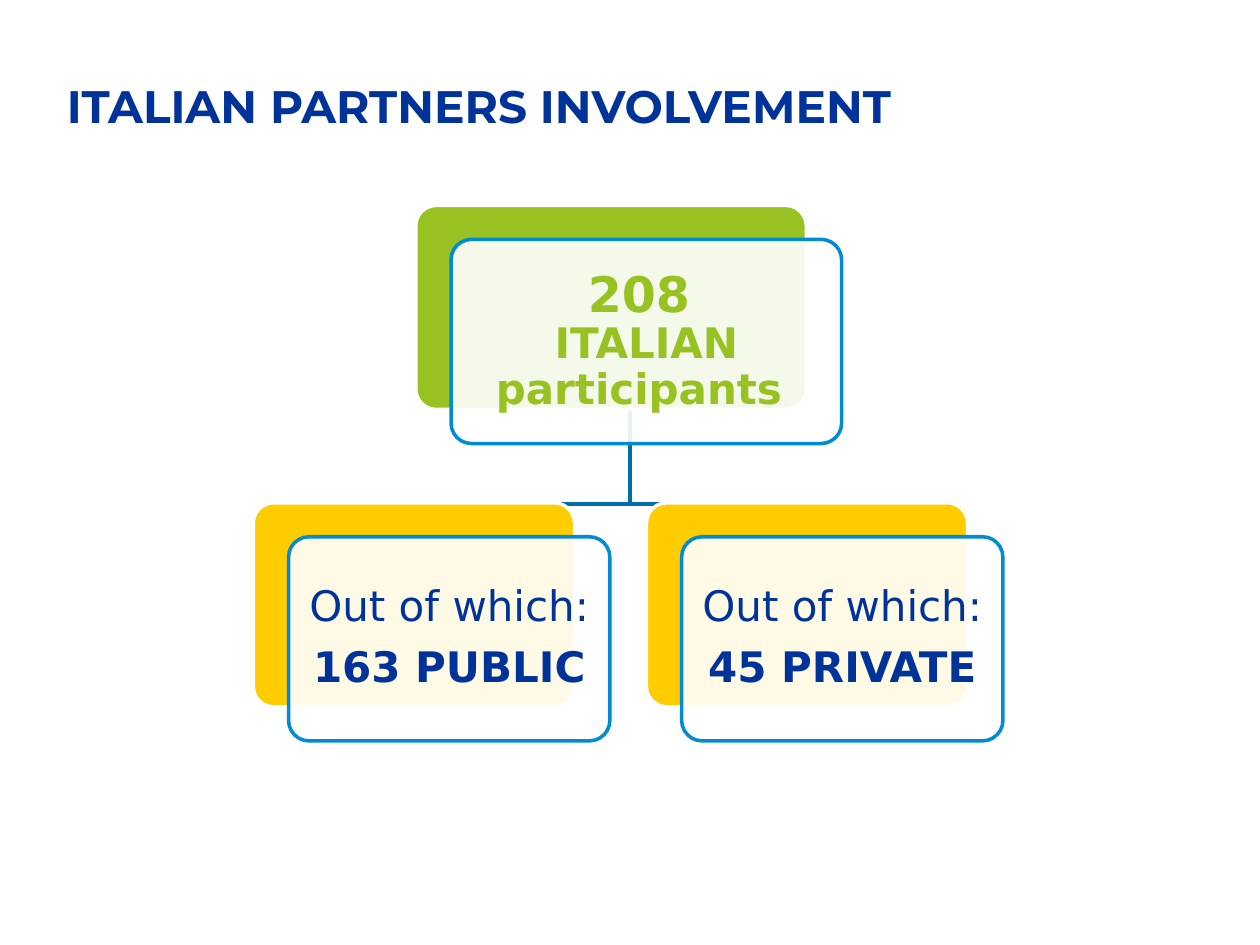
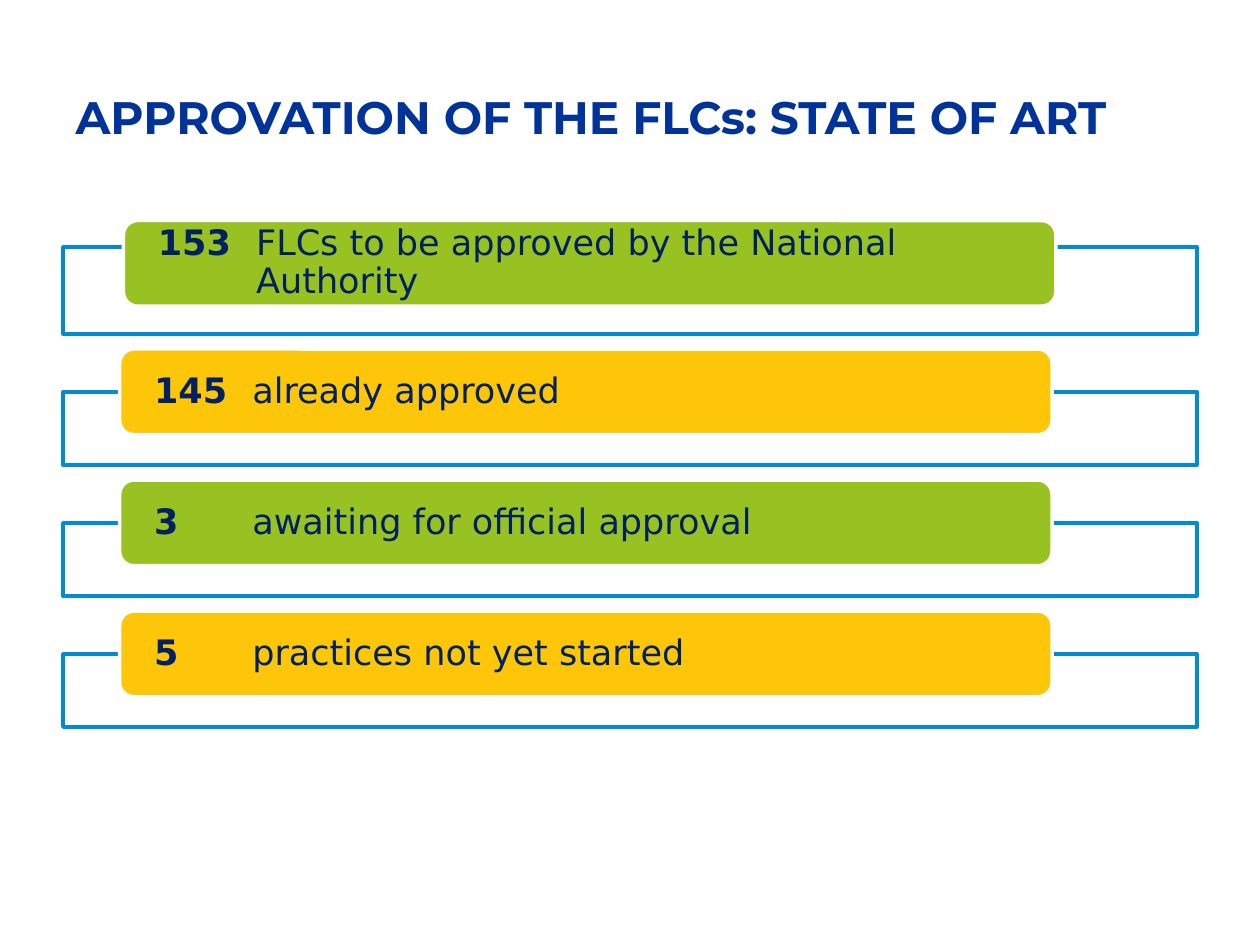
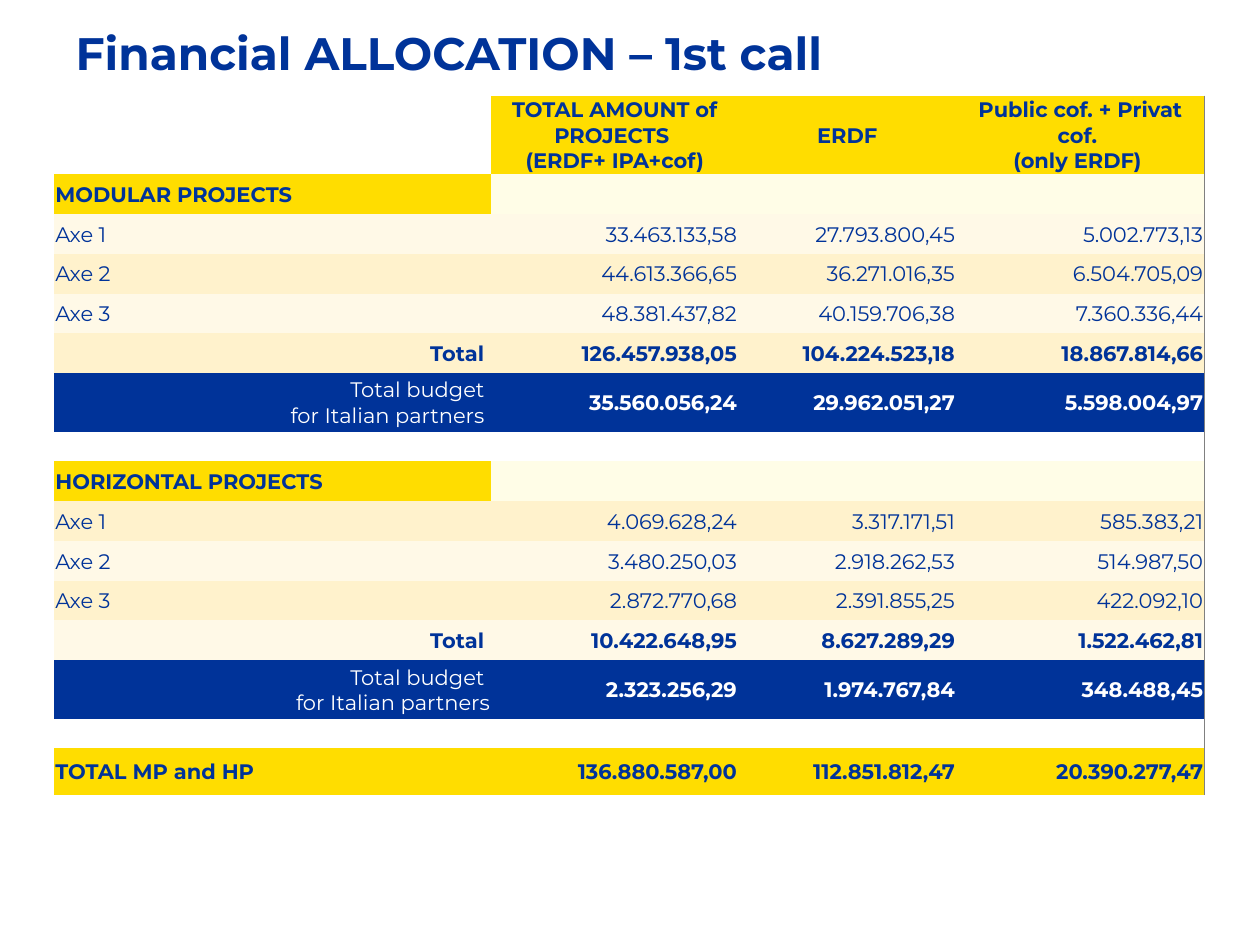
import lxml.etree
import pptx
import pptx.dml.color
import pptx.enum.shapes
import pptx.enum.text
import pptx.oxml.ns
import pptx.util

Inches = pptx.util.Inches
Pt = pptx.util.Pt
RGBColor = pptx.dml.color.RGBColor
SHAPES = pptx.enum.shapes.MSO_SHAPE
ALIGN = pptx.enum.text.PP_ALIGN
MIDDLE = pptx.enum.text.MSO_ANCHOR.MIDDLE
qn = pptx.oxml.ns.qn

NAVY = RGBColor(0x00, 0x33, 0x99)
DARK_NAVY = RGBColor(0x00, 0x20, 0x60)
BLUE = RGBColor(0x00, 0x8B, 0xD2)
LINK_BLUE = RGBColor(0x00, 0x6F, 0xA8)
GREEN = RGBColor(0x98, 0xC2, 0x22)
GOLD = RGBColor(0xFF, 0xCC, 0x00)
AMBER = RGBColor(0xFD, 0xC6, 0x08)
YELLOW = RGBColor(0xFF, 0xDD, 0x00)
IVORY = RGBColor(0xFF, 0xFD, 0xE7)
CREAM = RGBColor(0xFF, 0xF9, 0xE7)
SAND = RGBColor(0xFF, 0xF2, 0xCC)
WHITE = RGBColor(0xFF, 0xFF, 0xFF)
TITLE_FONT = "Montserrat"
DIAGRAM_FONT = "DejaVu Sans"

deck = pptx.Presentation()
deck.slide_width = Inches(10)
deck.slide_height = Inches(7.5)


def add_page(title, left, top, width, height):
    page = deck.slides.add_slide(deck.slide_layouts[5])
    box = page.shapes.title
    box.left, box.top = Inches(left), Inches(top)
    box.width, box.height = Inches(width), Inches(height)
    box.text_frame.text = title
    box.text_frame.vertical_anchor = MIDDLE
    paragraph = box.text_frame.paragraphs[0]
    paragraph.alignment = ALIGN.LEFT
    paragraph.font.name = TITLE_FONT
    paragraph.font.size = Pt(26)
    paragraph.font.bold = True
    paragraph.font.color.rgb = NAVY
    return page


def add_box(page, kind, left, top, width, height, fill, line, opacity=100):
    box = page.shapes.add_shape(
        kind, Inches(left), Inches(top), Inches(width), Inches(height))
    box.shadow.inherit = False
    box.fill.solid()
    box.fill.fore_color.rgb = fill
    box.line.color.rgb = line
    box.line.width = Pt(2)
    if opacity < 100:
        color = box.fill._xPr.find(".//" + qn("a:srgbClr"))
        lxml.etree.SubElement(color, qn("a:alpha"), val=str(opacity * 1000))
    return box


# Slide 1: partner tree
page = add_page("ITALIAN PARTNERS INVOLVEMENT", 0.43, 0.21, 9.41, 1.25)

# Branches from the total to both groups
for branch_x in (6.41, 3.29):
    builder = page.shapes.build_freeform(4.85, 3.24, scale=Inches(1))
    builder.add_line_segments(
        [(4.85, 3.75), (branch_x, 3.75), (branch_x, 3.99)], close=False)
    branch = builder.convert_to_shape()
    branch.shadow.inherit = False
    branch.fill.background()
    branch.line.color.rgb = LINK_BLUE
    branch.line.width = Pt(2)

# Cards: left, top, width, back colour, text colour, inset,
# then paragraphs as lists of (text, size, bold)
cards = [
    (3.3, 1.63, 3.1, GREEN, GREEN, 0.12,
     [[("208", 28, True), (" ", 24, True), "break",
       ("ITALIAN participants ", 24, True)]]),
    (2.01, 3.99, 2.55, GOLD, NAVY, 0.1,
     [[("Out of which: ", 24, False)], [("163 PUBLIC ", 24, True)]]),
    (5.13, 3.99, 2.55, GOLD, NAVY, 0.1,
     [[("Out of which: ", 24, False)], [("45 PRIVATE", 24, True)]]),
]
for left, top, width, back_color, text_color, inset, lines in cards:
    back = add_box(page, SHAPES.ROUNDED_RECTANGLE, left, top, width, 1.62,
                   back_color, WHITE)
    front = add_box(page, SHAPES.ROUNDED_RECTANGLE, left + 0.28, top + 0.27,
                    width, 1.62, WHITE, BLUE, opacity=90)
    back.adjustments[0] = front.adjustments[0] = 0.1
    frame = front.text_frame
    frame.word_wrap = True
    frame.vertical_anchor = MIDDLE
    frame.margin_left = frame.margin_right = Inches(inset)
    frame.margin_top = frame.margin_bottom = Inches(inset)
    for index, spans in enumerate(lines):
        paragraph = frame.add_paragraph() if index else frame.paragraphs[0]
        paragraph.alignment = ALIGN.CENTER
        paragraph.line_spacing = 0.9
        paragraph.space_after = Pt(9)
        paragraph.font.name = DIAGRAM_FONT
        for item in spans:
            if item == "break":
                paragraph.add_line_break()
                continue
            span = paragraph.add_run()
            span.text, size, span.font.bold = item
            span.font.size = Pt(size)
            span.font.color.rgb = text_color

# Slide 2: approval status
page = add_page("APPROVATION OF THE FLCs: STATE OF ART", 0.5, 0.3, 9, 1.25)

# Rows: frame top, frame height, bar left, bar top, colour, number, label
rows = [(1.96, 0.69, 0.98, 1.75, GREEN, "153",
         "FLCs to be approved by the National Authority")]
later_rows = [(AMBER, "145 ", "already approved"),
              (GREEN, "3 ", "awaiting for official approval"),
              (AMBER, "5 ", "practices not yet started")]
for index, row in enumerate(later_rows):
    offset = 1.04 * index
    rows.append((3.11 + offset, 0.58, 0.95, 2.77 + offset, *row))

for frame_top, frame_height, left, top, color, number, label in rows:
    add_box(page, SHAPES.RECTANGLE, 0.5, frame_top, 9, frame_height,
            WHITE, BLUE, opacity=90)
    bar = add_box(page, SHAPES.ROUNDED_RECTANGLE, left, top, 7.4, 0.68,
                  color, WHITE)
    frame = bar.text_frame
    frame.word_wrap = True
    frame.vertical_anchor = MIDDLE
    frame.margin_left = frame.margin_right = Inches(0.24)
    frame.margin_top = frame.margin_bottom = 0
    paragraph = frame.paragraphs[0]
    paragraph.alignment = ALIGN.LEFT
    paragraph.line_spacing = 0.9
    paragraph.space_after = Pt(7)
    properties = paragraph._p.get_or_add_pPr()
    properties.set("marL", str(Inches(0.78)))
    properties.set("indent", str(-Inches(0.78)))
    paragraph.font.name = DIAGRAM_FONT
    paragraph.font.size = Pt(20)
    for text, bold in ((number + "\t", True), (label, False)):
        span = paragraph.add_run()
        span.text = text
        span.font.bold = bold
        span.font.color.rgb = DARK_NAVY

# Slide 3: budget table
page = add_page("Financial ALLOCATION – 1st call", 0.5, -0.01, 9, 0.85)

# Rows: style, then cell texts
budget = [
    ("header", "", "TOTAL AMOUNT of PROJECTS \v(ERDF+ IPA+cof)", "ERDF",
     "Public cof. + Privat cof. \n(only ERDF) "),
    ("section", "MODULAR PROJECTS", "", "", ""),
    ("axe", "Axe 1", "33.463.133,58", "27.793.800,45", "5.002.773,13"),
    ("axe", "Axe 2", "44.613.366,65", "36.271.016,35", "6.504.705,09"),
    ("axe", "Axe 3", "48.381.437,82", "40.159.706,38", "7.360.336,44"),
    ("total", "Total ", "126.457.938,05", "104.224.523,18", "18.867.814,66"),
    ("italian", "Total budget \vfor Italian partners ", "35.560.056,24",
     "29.962.051,27", "5.598.004,97"),
    ("gap", "", "", "", ""),
    ("section", "HORIZONTAL PROJECTS", "", "", ""),
    ("axe", "Axe 1", "4.069.628,24", "3.317.171,51", "585.383,21"),
    ("axe", "Axe 2", "3.480.250,03", "2.918.262,53", "514.987,50"),
    ("axe", "Axe 3", "2.872.770,68", "2.391.855,25", "422.092,10"),
    ("total", "Total ", "10.422.648,95", "8.627.289,29", "1.522.462,81"),
    ("italian", "Total budget \vfor Italian partners", "2.323.256,29",
     "1.974.767,84", "348.488,45"),
    ("gap", "", "", "", ""),
    ("grand", "TOTAL MP and HP", "136.880.587,00", "112.851.812,47",
     "20.390.277,47"),
]
row_heights = {"header": 0.61, "section": 0.32, "axe": 0.315, "total": 0.315,
               "italian": 0.47, "gap": 0.23, "grand": 0.37}
row_fills = {"header": (None, YELLOW), "section": (YELLOW, IVORY),
             "italian": (NAVY, NAVY), "gap": (None, None),
             "grand": (YELLOW, YELLOW)}

table = page.shapes.add_table(len(budget), 4, Inches(0.43), Inches(0.76),
                              Inches(9.13), Inches(5.52)).table
table.first_row = table.horz_banding = False
# Plain style without grid
table._tbl.tblPr.find(qn("a:tableStyleId")).text = (
    "{2D5ABB26-0587-4C30-8999-92F81FD0307C}")
for column, width in zip(table.columns, (3.47, 1.96, 1.73, 1.97)):
    column.width = Inches(width)

for row_index, (style, *texts) in enumerate(budget):
    table.rows[row_index].height = Inches(row_heights[style])
    band = SAND if row_index % 2 else CREAM
    label_fill, value_fill = row_fills.get(style, (band, band))
    for column_index, text in enumerate(texts):
        is_label = column_index == 0
        cell = table.cell(row_index, column_index)
        cell.vertical_anchor = MIDDLE
        cell.margin_left = cell.margin_right = cell.margin_top = Inches(0.01)
        cell.margin_bottom = 0
        fill = label_fill if is_label else value_fill
        if fill is None:
            cell.fill.background()
        else:
            cell.fill.solid()
            cell.fill.fore_color.rgb = fill

        # Text
        cell.text_frame.text = text
        for paragraph in cell.text_frame.paragraphs:
            if style == "header":
                paragraph.alignment = ALIGN.CENTER
            elif is_label and style not in ("total", "italian"):
                paragraph.alignment = ALIGN.LEFT
            else:
                paragraph.alignment = ALIGN.RIGHT
            paragraph.font.name = TITLE_FONT
            paragraph.font.size = Pt(12 if text else 8)
            paragraph.font.bold = not (
                style == "axe" or style == "italian" and is_label)
            paragraph.font.color.rgb = WHITE if style == "italian" else NAVY
            if not text:
                lxml.etree.SubElement(
                    paragraph._p, qn("a:endParaRPr"), sz="800")

        # Thin grey line on the right edge of the table
        if column_index == 3:
            edge = lxml.etree.Element(qn("a:lnR"), w=str(Pt(0.25)))
            edge_fill = lxml.etree.SubElement(edge, qn("a:solidFill"))
            lxml.etree.SubElement(edge_fill, qn("a:srgbClr"), val="808080")
            cell._tc.get_or_add_tcPr().insert(0, edge)

deck.save("out.pptx")
